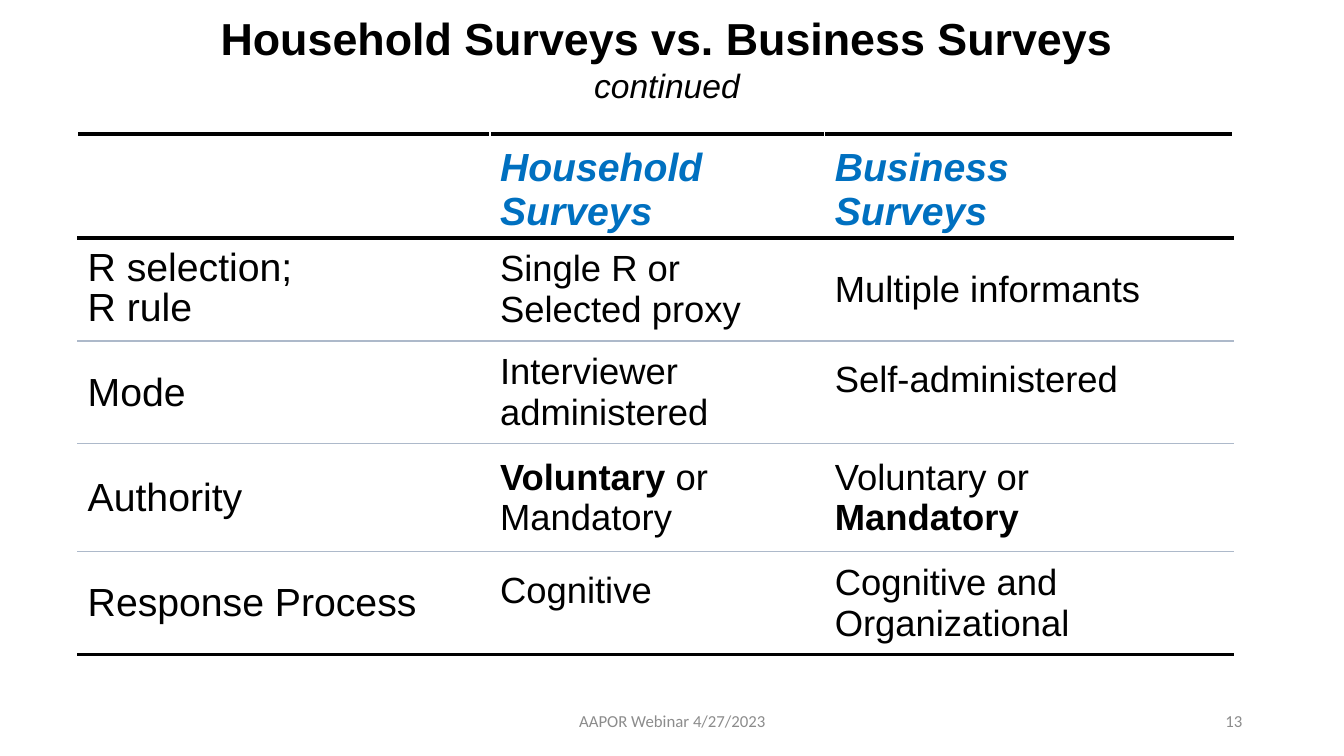
from lxml import etree
from pptx import Presentation
from pptx.dml.color import RGBColor
from pptx.enum.text import MSO_ANCHOR, PP_ALIGN
from pptx.oxml.ns import qn
from pptx.util import Inches, Pt

TOP, MID, LOW = MSO_ANCHOR.TOP, MSO_ANCHOR.MIDDLE, MSO_ANCHOR.BOTTOM
LEFT, CENTER, RIGHT = PP_ALIGN.LEFT, PP_ALIGN.CENTER, PP_ALIGN.RIGHT
WIDE, HIGH = 13.33, 7.5
BLACK, BLUE, GRAY, RULE = "000000", "0070C0", "8C8C8C", "ADB9CA"

COLS = [4.09, 3.32, 4.05]
ROWS = [1.02, 1.02, 1.02, 1.07, 1.02]
# "\n" starts a paragraph, "|" breaks a line, "*" switches bold
CELLS = [
    ["", "Household\nSurveys", "Business\nSurveys"],
    ["R selection;\nR rule", "Single R or|Selected proxy", "Multiple informants"],
    ["Mode", "Interviewer administered", "Self-administered"],
    ["Authority", "*Voluntary* or Mandatory", "Voluntary or *Mandatory*"],
    ["Response Process", "Cognitive", "Cognitive and Organizational"],
]
RAISED = {(2, 2), (4, 1)}


def paint(code):
    return RGBColor.from_string(code)


def write(para, text, size=26, font="Arial", color=BLACK, bold=False,
          italic=False, align=LEFT, lead=None):
    para.alignment = align
    if lead:
        para.line_spacing = lead
    for i, line in enumerate(text.split("|")):
        if i:
            para.add_line_break()
        for j, part in enumerate(line.split("*")):
            if part:
                run = para.add_run()
                run.text = part
                run.font.name, run.font.size = font, Pt(size)
                run.font.bold = bold or j % 2 == 1
                run.font.italic = italic
                run.font.color.rgb = paint(color)


def frame(slide, box, anchor):
    body = slide.shapes.add_textbox(*map(Inches, box)).text_frame
    body.word_wrap = True
    body.vertical_anchor = anchor
    return body.paragraphs[0]


def edge(cell, side, color, width):
    line = etree.SubElement(cell._tc.get_or_add_tcPr(), qn("a:" + side),
                            w=str(Pt(width)))
    fill = etree.SubElement(line, qn("a:solidFill"))
    etree.SubElement(fill, qn("a:srgbClr"), val=color)


def title(slide, box):
    para = frame(slide, box, TOP)
    write(para, "Household Surveys vs. Business Surveys ", size=32,
          bold=True, align=CENTER)
    write(para, "continued", size=24, italic=True, align=CENTER)


def grid(slide, left, top):
    table = slide.shapes.add_table(
        len(ROWS), len(COLS), Inches(left), Inches(top),
        Inches(sum(COLS)), Inches(sum(ROWS))).table
    table.first_row = table.horz_banding = False
    for col, width in zip(table.columns, COLS):
        col.width = Inches(width)
    for row, height in zip(table.rows, ROWS):
        row.height = Inches(height)

    # Heavy rules frame the head and close the table
    rules = [(BLACK, 3) if i in (0, 1, len(ROWS)) else (RULE, 1)
             for i in range(len(ROWS) + 1)]
    for r, texts in enumerate(CELLS):
        for c, text in enumerate(texts):
            cell = table.cell(r, c)
            edge(cell, "lnT", *rules[r])
            edge(cell, "lnB", *rules[r + 1])
            cell.fill.background()
            cell.vertical_anchor = MID if r else LOW
            if (r, c) in RAISED:
                cell.margin_bottom = Inches(0.3)
            if r == 0:
                look = dict(size=28, color=BLUE, bold=True, italic=True)
            else:
                look = dict(size=26 if c else 28)
            body = cell.text_frame
            lines = text.split("\n")
            for i, line in enumerate(lines):
                para = body.add_paragraph() if i else body.paragraphs[0]
                lead = 0.9 if r and len(lines) > 1 else None
                write(para, line, lead=lead, **look)


def footer(slide, top, high):
    look = dict(size=12, font="Calibri", color=GRAY)
    note = frame(slide, (4.42, top, 4.5, high), MID)
    write(note, "AAPOR Webinar 4/27/2023", align=CENTER, **look)
    page = frame(slide, (9.42, top, 3, high), MID)
    write(page, "13", align=RIGHT, **look)


def main():
    deck = Presentation()
    deck.slide_width, deck.slide_height = Inches(WIDE), Inches(HIGH)
    slide = deck.slides.add_slide(deck.slide_layouts[6])
    title(slide, (1.7, 0.06, 9.83, 1.03))
    grid(slide, 0.77, 1.33)
    footer(slide, 6.95, 0.4)
    deck.save("out.pptx")


if __name__ == "__main__":
    main()
